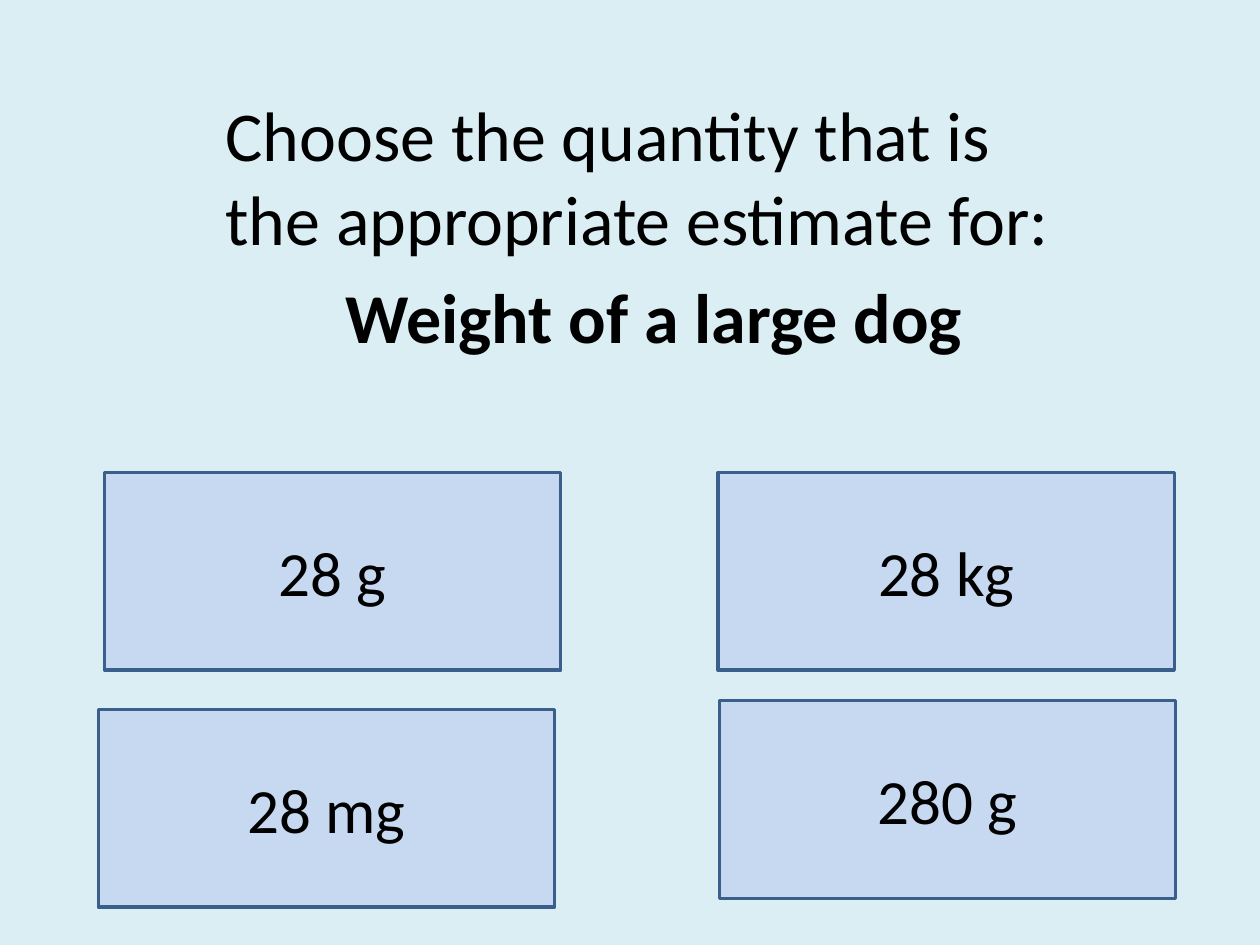
from pptx import Presentation
from pptx.dml.color import RGBColor
from pptx.enum import shapes, text
from pptx.oxml import xmlchemy
from pptx.util import Inches, Pt

SKY = RGBColor(0xDB, 0xEE, 0xF4)
PALE = RGBColor(0xC6, 0xD9, 0xF1)
EDGE = RGBColor(0x3A, 0x5F, 0x8C)
BLACK = RGBColor(0, 0, 0)
CENTRE = text.PP_ALIGN.CENTER

CARD_W, CARD_H = 3.62, 1.57
CARDS = [
    ("28 kg", 5.7, 3.75),
    ("28 g", 0.83, 3.75),
    ("280 g", 5.71, 5.56),
    ("28 mg", 0.78, 5.63),
]


def write(para, words, size=36, bold=False, align=CENTRE):
    para.alignment = align
    run = para.add_run()
    run.text = words
    font = run.font
    font.name, font.size, font.bold = "Calibri", Pt(size), bold
    font.color.rgb = BLACK


def unlist(para):
    """Remove the bullet and hanging indent that the body gives a paragraph."""
    props = para._p.get_or_add_pPr()
    props.set("marL", "0")
    props.set("indent", "0")
    props.append(xmlchemy.OxmlElement("a:buNone"))


class Quiz:
    def __init__(self, deck):
        self.slide = deck.slides.add_slide(deck.slide_layouts[1])
        fill = self.slide.background.fill
        fill.solid()
        fill.fore_color.rgb = SKY
        title = self.slide.shapes.title._element
        title.getparent().remove(title)

    def ask(self, prompt, item):
        body = self.slide.placeholders[1]
        body.left, body.top = Inches(1.69), Inches(0.68)
        body.width, body.height = Inches(7), Inches(2.45)
        frame = body.text_frame
        first, last = frame.paragraphs[0], frame.add_paragraph()
        write(first, prompt, size=40, align=text.PP_ALIGN.LEFT)
        write(last, item, size=40, bold=True)
        for para in (first, last):
            unlist(para)

    def card(self, words, left, top):
        box = self.slide.shapes.add_shape(
            shapes.MSO_SHAPE.RECTANGLE,
            Inches(left), Inches(top), Inches(CARD_W), Inches(CARD_H))
        box.shadow.inherit = False
        box.fill.solid()
        box.fill.fore_color.rgb = PALE
        box.line.color.rgb = EDGE
        box.line.width = Pt(2)
        frame = box.text_frame
        frame.vertical_anchor = text.MSO_ANCHOR.MIDDLE
        write(frame.paragraphs[0], words)


def main():
    deck = Presentation()
    deck.slide_width, deck.slide_height = Inches(10), Inches(7.5)
    quiz = Quiz(deck)
    for words, left, top in CARDS:
        quiz.card(words, left, top)
    quiz.ask("Choose the quantity that is the appropriate estimate for:",
             "Weight of a large dog")
    deck.save("out.pptx")


if __name__ == "__main__":
    main()
